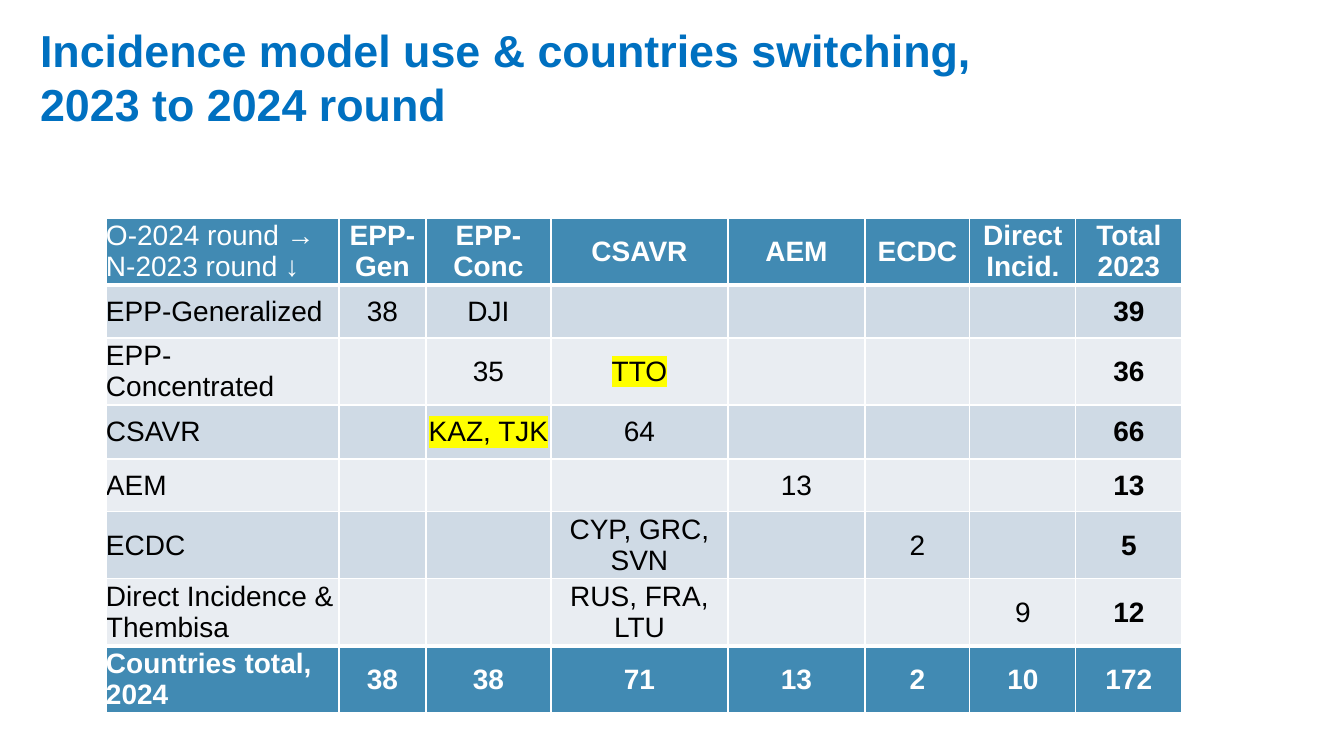
"""Build the slide on incidence model use and countries switching models."""
from lxml.etree import SubElement
from pptx import Presentation
from pptx.dml.color import RGBColor
from pptx.enum.text import MSO_ANCHOR, PP_ALIGN
from pptx.oxml.ns import qn

PIXEL = 914400 / 100.8
TITLE_BLUE = RGBColor(0x00, 0x70, 0xC0)
HEADER_BLUE = RGBColor(0x41, 0x8A, 0xB3)
BAND_DARK = RGBColor(0xCF, 0xDA, 0xE5)
BAND_LIGHT = RGBColor(0xE9, 0xED, 0xF2)
WHITE = RGBColor(0xFF, 0xFF, 0xFF)
BLACK = RGBColor(0x00, 0x00, 0x00)
YELLOW = RGBColor(0xFF, 0xFF, 0x00)

COLUMN_WIDTHS = [233, 87, 125, 177, 137, 105, 106, 106]
ROW_HEIGHTS = [67, 53, 67, 54, 53, 67, 67, 67]
MODEL_ROWS = [
    ["O-2024 round →\nN-2023 round ↓", "EPP-Gen", "EPP-Conc", "CSAVR", "AEM", "ECDC",
     "Direct Incid.", "Total 2023"],
    ["EPP-Generalized", "38", "DJI", "", "", "", "", "39"],
    ["EPP-Concentrated", "", "35", "TTO", "", "", "", "36"],
    ["CSAVR", "", "KAZ, TJK", "64", "", "", "", "66"],
    ["AEM", "", "", "", "13", "", "", "13"],
    ["ECDC", "", "", "CYP, GRC, SVN", "", "2", "", "5"],
    ["Direct Incidence & Thembisa", "", "", "RUS, FRA, LTU", "", "", "9", "12"],
    ["Countries total, 2024", "38", "38", "71", "13", "2", "10", "172"],
]
HIGHLIGHTED = {"TTO", "KAZ, TJK"}


def px(length):
    """Turn pixels into EMU."""
    return round(length * PIXEL)


def write(text_frame, text, *, size, color, font="Arial", bold=False,
          align=PP_ALIGN.LEFT, highlight=None):
    """Fill a text frame; a newline starts a paragraph, a vertical tab a line."""
    text_frame.text = text
    for paragraph in text_frame.paragraphs:
        paragraph.alignment = align
        paragraph.line_spacing = 1.0
        for run in paragraph.runs:
            run.font.name = font
            run.font.size = size * 12700
            run.font.bold = bold
            run.font.color.rgb = color
            if highlight is not None:
                mark = SubElement(run.font._element, qn("a:highlight"))
                SubElement(mark, qn("a:srgbClr"), val=str(highlight))
                run.font._element.find(qn("a:solidFill")).addnext(mark)


class ModelSlide:
    """Hold the slide's style and draw its elements."""

    title_size = 32
    cell_size = 20
    thin_border = 1
    thick_border = 3

    def __init__(self, presentation):
        """Add a title-only slide."""
        self.slide = presentation.slides.add_slide(presentation.slide_layouts[5])

    def title(self, text, left, top, width, height):
        """Place and format the title."""
        title = self.slide.shapes.title
        title.left, title.top, title.width, title.height = map(px, (left, top, width, height))
        title.text_frame.word_wrap = True
        title.text_frame.vertical_anchor = MSO_ANCHOR.MIDDLE
        write(title.text_frame, text, size=self.title_size, color=TITLE_BLUE, bold=True)

    def borders(self, cell, top, bottom):
        """Draw white borders around a cell."""
        thin = self.thin_border
        properties = cell._tc.get_or_add_tcPr()
        for side, width in (("L", thin), ("R", thin), ("T", top), ("B", bottom)):
            line = SubElement(properties, qn(f"a:ln{side}"), w=str(width * 12700))
            fill = SubElement(line, qn("a:solidFill"))
            SubElement(fill, qn("a:srgbClr"), val=str(WHITE))

    def table(self, rows, left, top, widths, heights):
        """Draw a table with a header row, banded rows and a total row."""
        frame = self.slide.shapes.add_table(
            len(rows), len(widths), px(left), px(top), px(sum(widths)), px(sum(heights)))
        table = frame.table
        table.first_row = table.horz_banding = False
        for column, width in zip(table.columns, widths):
            column.width = px(width)
        for row, height in zip(table.rows, heights):
            row.height = px(height)
        last_row, last_column = len(rows) - 1, len(widths) - 1
        edges = [self.thick_border if edge in (1, last_row) else self.thin_border
                 for edge in range(len(rows) + 1)]
        for row_index, row in enumerate(rows):
            solid = row_index in (0, last_row)
            band = BAND_DARK if row_index % 2 else BAND_LIGHT
            for column_index, text in enumerate(row):
                cell = table.cell(row_index, column_index)
                self.borders(cell, edges[row_index], edges[row_index + 1])
                cell.fill.solid()
                cell.fill.fore_color.rgb = HEADER_BLUE if solid else band
                cell.margin_left = cell.margin_right = cell.margin_top = cell.margin_bottom = 0
                cell.vertical_anchor = MSO_ANCHOR.MIDDLE
                is_corner = row_index == column_index == 0
                write(cell.text_frame, text, size=self.cell_size,
                      color=WHITE if solid else BLACK,
                      bold=(solid and not is_corner) or column_index == last_column,
                      align=PP_ALIGN.CENTER if column_index else PP_ALIGN.LEFT,
                      highlight=YELLOW if text in HIGHLIGHTED else None)


def main():
    """Build and save the presentation."""
    presentation = Presentation()
    presentation.slide_width, presentation.slide_height = px(1344), px(756)
    model_slide = ModelSlide(presentation)
    model_slide.title("Incidence model use & countries switching, \v2023 to 2024 round",
                      30, 17, 1277, 119)
    model_slide.table(MODEL_ROWS, 106, 218, COLUMN_WIDTHS, ROW_HEIGHTS)
    presentation.save("out.pptx")


if __name__ == "__main__":
    main()
